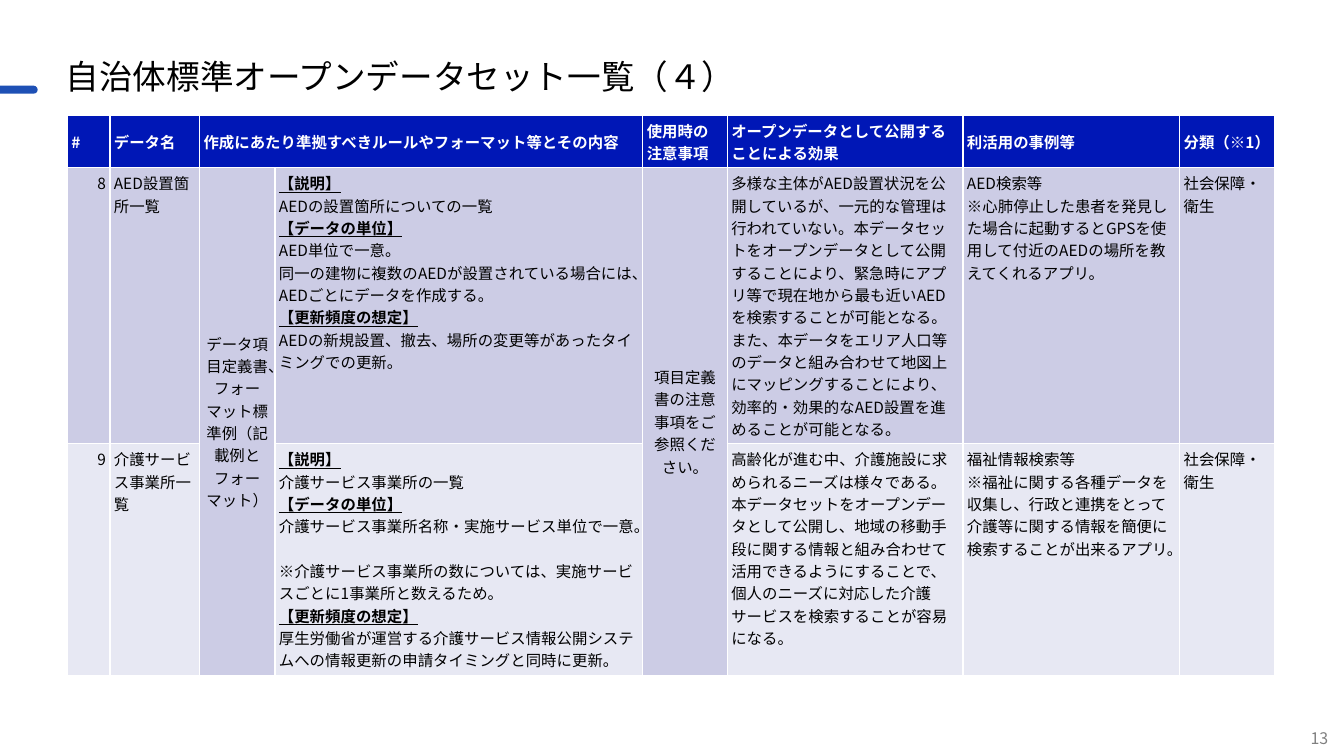
from lxml.etree import SubElement
from pptx import Presentation
from pptx.dml.color import RGBColor
from pptx.enum.shapes import MSO_SHAPE as SHAPE
from pptx.enum.text import MSO_ANCHOR as ANCHOR, MSO_AUTO_SIZE as AUTO, PP_ALIGN as ALIGN
from pptx.oxml.ns import qn
from pptx.util import Cm, Pt

FONT = "Noto Sans CJK JP"
NAVY = RGBColor(0x00, 0x17, 0xB6)
ACCENT = RGBColor(0x1E, 0x50, 0xB5)
LILAC = RGBColor(0xCC, 0xCC, 0xE5)
PALE = RGBColor(0xE7, 0xE8, 0xF3)
GRAY = RGBColor(0x80, 0x80, 0x80)
WHITE = RGBColor(0xFF, 0xFF, 0xFF)
BLACK = RGBColor(0x00, 0x00, 0x00)

COL_WIDTHS = [1.07, 2.26, 1.9, 9.27, 2.13, 5.94, 5.46, 2.39]
ROW_HEIGHTS = [1.02, 6.63, 5.13]
ROW_FILLS = [NAVY, LILAC, PALE]
RULE_COL, NOTICE_COL = 2, 4
ROWS = [
    [
        "#",
        "データ名",
        "作成にあたり準拠すべきルールやフォーマット等とその内容",
        "",
        "使用時の注意事項",
        "オープンデータとして公開することによる効果",
        "利活用の事例等",
        "分類（※1）",
    ],
    [
        "8",
        "AED設置箇所一覧",
        "データ項目定義書、フォーマット標準例（記載例とフォーマット）",
        "【説明】\nAEDの設置箇所についての一覧\n"
        "【データの単位】\nAED単位で一意。\n"
        "同一の建物に複数のAEDが設置されている場合には、AEDごとにデータを作成する。\n"
        "【更新頻度の想定】\nAEDの新規設置、撤去、場所の変更等があったタイミングでの更新。",
        "項目定義書の注意事項をご参照ください。",
        "多様な主体がAED設置状況を公開しているが、一元的な管理は行われていない。"
        "本データセットをオープンデータとして公開することにより、緊急時にアプリ等で"
        "現在地から最も近いAEDを検索することが可能となる。また、本データをエリア人口等の"
        "データと組み合わせて地図上にマッピングすることにより、効率的・効果的なAED設置を"
        "進めることが可能となる。",
        "AED検索等\n※心肺停止した患者を発見した場合に起動するとGPSを使用して"
        "付近のAEDの場所を教えてくれるアプリ。",
        "社会保障・衛生",
    ],
    [
        "9",
        "介護サービス事業所一覧",
        "",
        "【説明】\n介護サービス事業所の一覧\n"
        "【データの単位】\n介護サービス事業所名称・実施サービス単位で一意。\n"
        "※介護サービス事業所の数については、実施サービスごとに1事業所と数えるため。\n"
        "【更新頻度の想定】\n厚生労働省が運営する介護サービス情報公開システムへの"
        "情報更新の申請タイミングと同時に更新。",
        "",
        "高齢化が進む中、介護施設に求められるニーズは様々である。\n"
        "本データセットをオープンデータとして公開し、地域の移動手段に関する情報と"
        "組み合わせて活用できるようにすることで、個人のニーズに対応した介護サービスを"
        "検索することが容易になる。",
        "福祉情報検索等\n※福祉に関する各種データを収集し、行政と連携をとって"
        "介護等に関する情報を簡便に検索することが出来るアプリ。",
        "社会保障・衛生",
    ],
]


def set_font(font, size, color):
    font.size = Pt(size)
    font.name = FONT
    font.color.rgb = color
    SubElement(font._element, qn("a:ea")).set("typeface", FONT)


def write(tf, text, size, color, align=ALIGN.LEFT, bold=False):
    p = tf.paragraphs[0]
    p.alignment = align
    set_font(p.font, size, color)
    p.font.bold = bold
    for i, line in enumerate(text.split("\n")):
        if i:
            p.add_line_break()
        r = p.add_run()
        r.text = line
        if line.startswith("【"):
            r.font.bold = True
            r.font.underline = True
    return p


def place(sp, x, y, w, h):
    sp.left, sp.top, sp.width, sp.height = Cm(x), Cm(y), Cm(w), Cm(h)


def add_title(s, x, y, w, h):
    bar = s.shapes.add_shape(SHAPE.ROUNDED_RECTANGLE, Cm(x - 1.65), Cm(y + 0.76), Cm(1.2), Cm(0.2))
    bar.adjustments[0] = 0.5
    bar.shadow.inherit = False
    bar.fill.solid()
    bar.fill.fore_color.rgb = ACCENT
    bar.line.fill.background()

    sp = s.shapes.title
    place(sp, x, y, w, h)
    tf = sp.text_frame
    tf.auto_size = AUTO.NONE
    tf.vertical_anchor = ANCHOR.TOP
    p = write(tf, "自治体標準オープンデータセット一覧（４）", 24, BLACK)
    p.line_spacing = 0.9


def fill_cell(cell, row, col, text):
    header = row == 0
    vertical = not header and col in (RULE_COL, NOTICE_COL)
    cell.fill.solid()
    cell.fill.fore_color.rgb = ROW_FILLS[row]
    cell.margin_left = cell.margin_right = cell.margin_top = cell.margin_bottom = Cm(0.1)
    cell.vertical_anchor = ANCHOR.MIDDLE if header or vertical else ANCHOR.TOP
    align = ALIGN.LEFT
    if vertical:
        cell._tc.get_or_add_tcPr().set("vert", "eaVert")
        align = ALIGN.CENTER
    elif not header and col == 0:
        align = ALIGN.RIGHT
    write(cell.text_frame, text, 11, WHITE if header else BLACK, align, header)


def add_dataset_table(s, x, y, w, h):
    frame = s.shapes.add_table(len(ROWS), len(COL_WIDTHS), Cm(x), Cm(y), Cm(w), Cm(h))
    table = frame.table
    for column, width in zip(table.columns, COL_WIDTHS):
        column.width = Cm(width * w / sum(COL_WIDTHS))
    for row, height in zip(table.rows, ROW_HEIGHTS):
        row.height = Cm(height * h / sum(ROW_HEIGHTS))
    table.cell(0, RULE_COL).merge(table.cell(0, RULE_COL + 1))
    for col in (RULE_COL, NOTICE_COL):
        table.cell(1, col).merge(table.cell(2, col))
    for i, texts in enumerate(ROWS):
        for j, text in enumerate(texts):
            cell = table.cell(i, j)
            if not cell.is_spanned:
                fill_cell(cell, i, j, text)


def add_page_number(s, x, y, w, h):
    tf = s.shapes.add_textbox(Cm(x), Cm(y), Cm(w), Cm(h)).text_frame
    tf.margin_left = tf.margin_right = tf.margin_top = tf.margin_bottom = 0
    tf.word_wrap = True
    tf.vertical_anchor = ANCHOR.MIDDLE
    write(tf, "13", 11.4, GRAY, ALIGN.CENTER)


def main():
    prs = Presentation()
    prs.slide_width, prs.slide_height = Cm(33.87), Cm(19.05)
    s = prs.slides.add_slide(prs.slide_layouts[5])
    add_title(s, 1.4, 1.4, 24.26, 2.1)
    add_dataset_table(s, 1.7, 2.9, 30.42, 12.78)
    add_page_number(s, 32.74, 18.31, 1.02, 0.58)
    prs.save("out.pptx")


if __name__ == "__main__":
    main()
